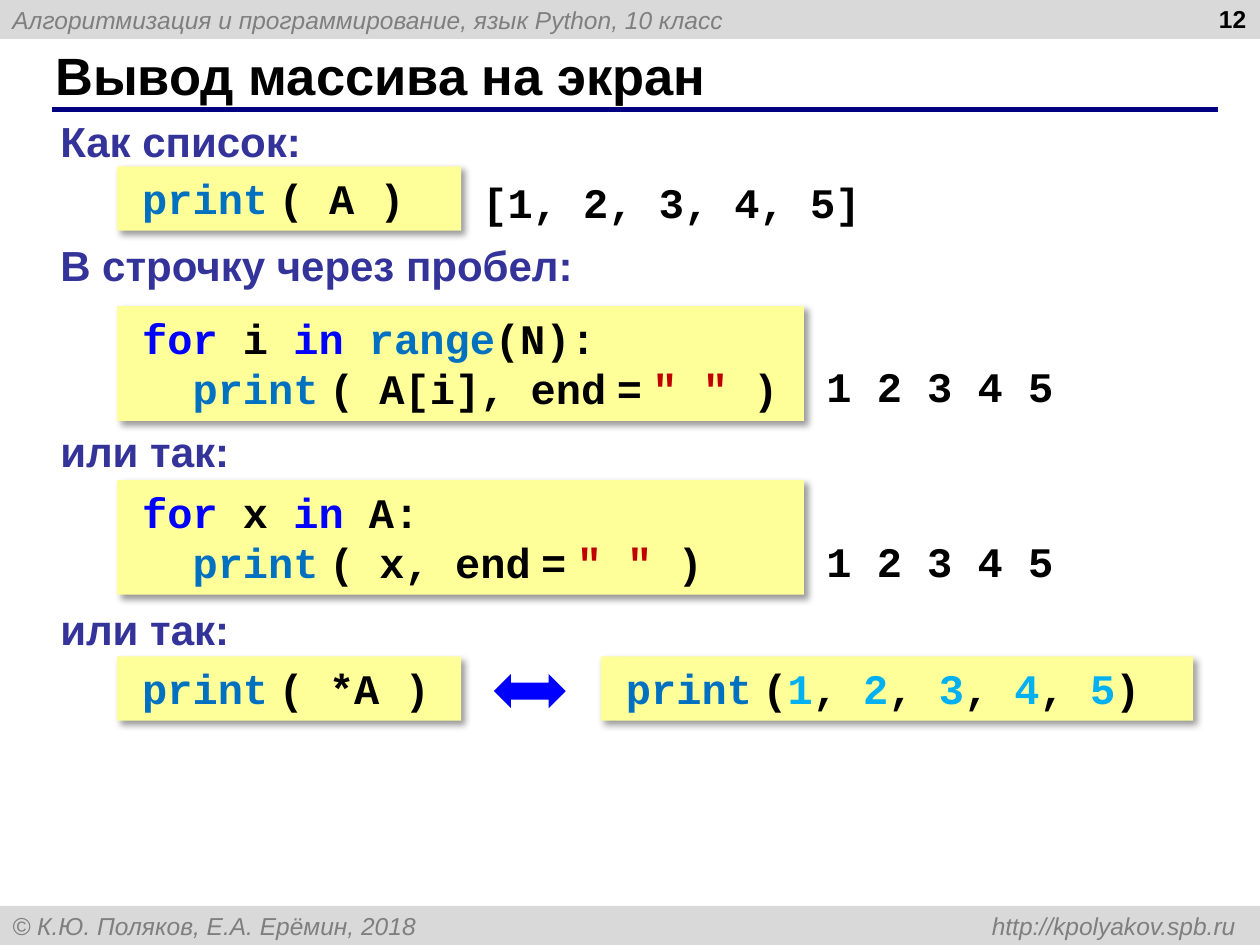
from lxml import etree
from pptx import Presentation
from pptx.dml.color import RGBColor as RGB
from pptx.enum.shapes import MSO_CONNECTOR, MSO_SHAPE as SHAPE
from pptx.enum.text import MSO_ANCHOR as ANCHOR, PP_ALIGN as ALIGN
from pptx.oxml import parse_xml
from pptx.oxml.ns import nsdecls, qn
from pptx.util import Inches, Pt

BLACK = RGB(0x00, 0x00, 0x00)
GRAY = RGB(0x7F, 0x7F, 0x7F)
BAND = RGB(0xD9, 0xD9, 0xD9)
NAVY = RGB(0x00, 0x00, 0x80)
INDIGO = RGB(0x33, 0x33, 0x99)
YELLOW = RGB(0xFF, 0xFF, 0x99)
KEYWORD = RGB(0x00, 0x00, 0xFF)
FUNCTION = RGB(0x00, 0x70, 0xC0)
STRING = RGB(0xC0, 0x00, 0x00)
NUMBER = RGB(0x00, 0xB0, 0xF0)
SANS, MONO = "Arial", "Courier New"
THIN = (" ", BLACK, 10)
PRINT = [("print", FUNCTION), THIN]
END = [THIN, ("=", BLACK), THIN, ('" "', STRING), (" )", BLACK)]


def add_run(p, text, size=24, font=SANS, color=BLACK, bold=True, italic=False):
    r = p.add_run()
    r.text = text
    r.font.size, r.font.name = Pt(size), font
    r.font.bold, r.font.italic = bold, italic
    r.font.color.rgb = color


def set_indent(p, left, first):
    pPr = p._p.get_or_add_pPr()
    pPr.set("marL", str(Inches(left)))
    pPr.set("indent", str(Inches(first)))


class Deck:
    """Draws lesson elements in one style on the current slide."""

    def __init__(self, prs):
        self.s = prs.slides.add_slide(prs.slide_layouts[6])

    def shape(self, kind, x, y, w, h, fill):
        sp = self.s.shapes.add_shape(kind, Inches(x), Inches(y), Inches(w), Inches(h))
        sp.shadow.inherit = False
        sp.fill.solid()
        sp.fill.fore_color.rgb = fill
        sp.line.fill.background()
        return sp

    def band(self, y, text, tab=None):
        sp = self.shape(SHAPE.RECTANGLE, 0, y, 10, 0.31, BAND)
        tf = sp.text_frame
        tf.vertical_anchor = ANCHOR.MIDDLE
        p = tf.paragraphs[0]
        p.alignment = ALIGN.LEFT
        if tab:
            tabs = etree.SubElement(p._p.get_or_add_pPr(), qn("a:tabLst"))
            etree.SubElement(tabs, qn("a:tab"), pos=str(Inches(tab)), algn="r")
        add_run(p, text, size=14, color=GRAY, bold=False, italic=True)

    def rule(self, x1, x2, y):
        c = self.s.shapes.add_connector(
            MSO_CONNECTOR.STRAIGHT, Inches(x1), Inches(y), Inches(x2), Inches(y))
        c.line.color.rgb, c.line.width = NAVY, Pt(3)
        etree.SubElement(c._element.spPr, qn("a:effectLst"))

    def text(self, text, x, y, w, h=0.51, anchor=ANCHOR.TOP, align=ALIGN.LEFT, **fmt):
        sp = self.s.shapes.add_textbox(Inches(x), Inches(y), Inches(w), Inches(h))
        tf = sp.text_frame
        tf.word_wrap, tf.vertical_anchor = True, anchor
        p = tf.paragraphs[0]
        p.alignment = align
        add_run(p, text, **fmt)

    def heading(self, text, y):
        self.text(text, 0.38, y, 5.02, color=INDIGO)

    def output(self, text, x, y, w):
        self.text(text, x, y, w, font=MONO)

    def code(self, lines, x, y, w):
        sp = self.shape(SHAPE.RECTANGLE, x, y, w, 0.11 + 0.4 * len(lines), YELLOW)
        sp._element.spPr.remove(sp._element.spPr.find(qn("a:effectLst")))
        sp._element.spPr.append(parse_xml(
            f'<a:effectLst {nsdecls("a")}><a:outerShdw blurRad="{Pt(4)}" dist="{Pt(3)}" '
            'dir="2700000" algn="tl" rotWithShape="0"><a:srgbClr val="000000">'
            '<a:alpha val="40000"/></a:srgbClr></a:outerShdw></a:effectLst>'))
        tf = sp.text_frame
        tf.vertical_anchor = ANCHOR.TOP
        for i, line in enumerate(lines):
            p = tf.add_paragraph() if i else tf.paragraphs[0]
            p.alignment = ALIGN.JUSTIFY
            set_indent(p, 0.2, -0.1)
            for text, color, *size in line:
                add_run(p, text, *size, font=MONO, color=color)


def loop_lines(head, item):
    return [head, [("  ", BLACK), *PRINT, (f"( {item}, end", BLACK), *END]]


def main():
    prs = Presentation()
    prs.slide_width, prs.slide_height = Inches(10), Inches(7.5)
    d = Deck(prs)
    d.band(0, "Алгоритмизация и программирование, язык Python, 10 класс")
    d.band(7.19, "© К.Ю. Поляков, Е.А. Ерёмин, 2018 \thttp://kpolyakov.spb.ru", tab=9.71)
    d.rule(0.41, 9.67, 0.87)
    d.text("Вывод массива на экран", 0.34, 0.33, 9.16, 0.52, ANCHOR.MIDDLE, size=30)
    d.text("12", 7.66, -0.02, 2.33, 0.52, align=ALIGN.RIGHT, size=14)

    d.heading("Как список:", 0.87)
    d.code([[*PRINT, ("( A )", BLACK)]], 0.93, 1.32, 2.73)
    d.output("[1, 2, 3, 4, 5]", 3.73, 1.35, 3.35)

    d.heading("В строчку через пробел:", 1.85)
    by_index = [("for ", KEYWORD), ("i ", BLACK), ("in ", KEYWORD),
                ("range", FUNCTION), ("(N):", BLACK)]
    d.code(loop_lines(by_index, "A[i]"), 0.93, 2.43, 5.45)
    d.output("1 2 3 4 5", 6.46, 2.81, 2.21)

    d.heading("или так:", 3.33)
    by_item = [("for ", KEYWORD), ("x ", BLACK), ("in ", KEYWORD), ("A:", BLACK)]
    d.code(loop_lines(by_item, "x"), 0.93, 3.81, 5.45)
    d.output("1 2 3 4 5", 6.46, 4.2, 2.21)

    d.heading("или так:", 4.74)
    d.code([[*PRINT, ("( *A )", BLACK)]], 0.93, 5.21, 2.73)
    numbers = [part for n in "12345" for part in ((n, NUMBER), (", ", BLACK))][:-1]
    d.code([[*PRINT, ("(", BLACK), *numbers, (")", BLACK)]], 4.77, 5.21, 4.7)
    d.shape(SHAPE.LEFT_RIGHT_ARROW, 3.92, 5.35, 0.57, 0.27, KEYWORD)
    prs.save("out.pptx")


if __name__ == "__main__":
    main()
